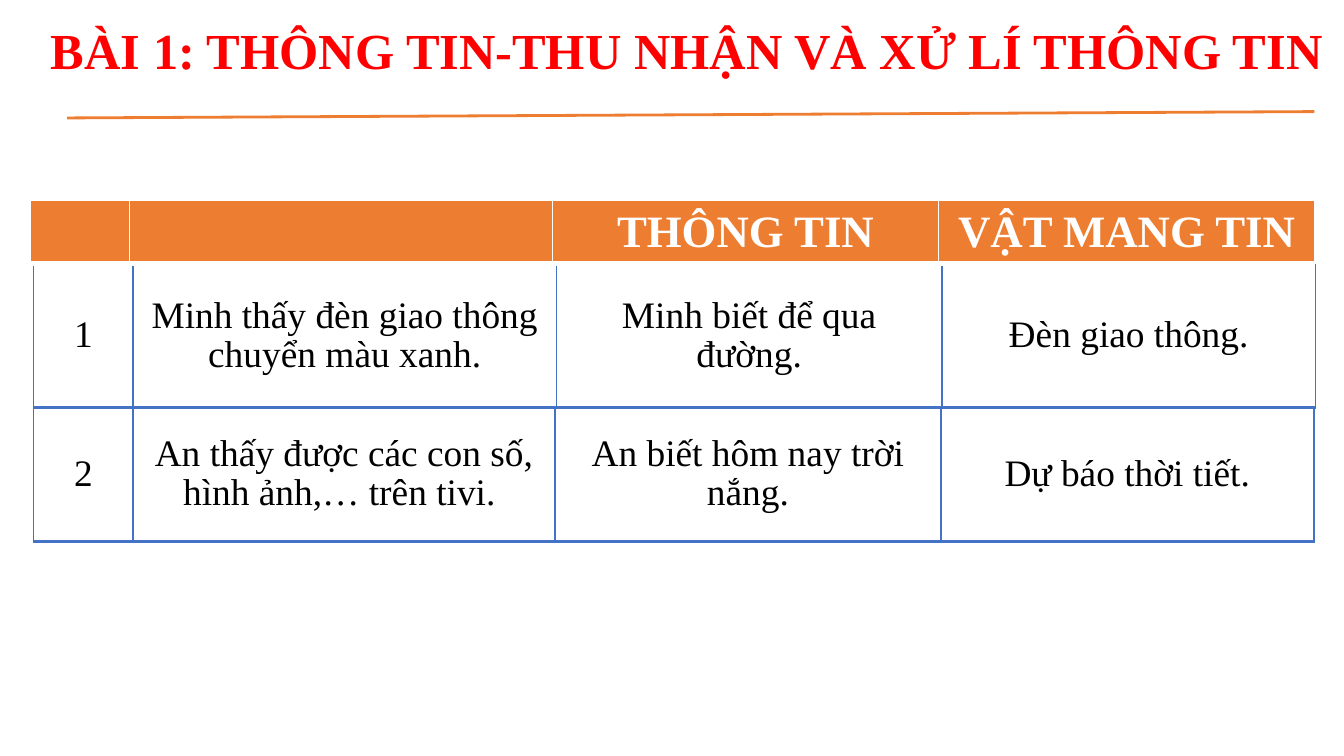
from lxml import etree
from pptx import Presentation
from pptx import util as u
from pptx.dml.color import RGBColor
from pptx.enum import shapes, text
from pptx.oxml import ns

ORANGE = RGBColor(0xED, 0x7D, 0x31)
BLUE = RGBColor(0x44, 0x72, 0xC4)
RED = RGBColor(0xFF, 0, 0)
WHITE = RGBColor(0xFF, 0xFF, 0xFF)
BLACK = RGBColor(0, 0, 0)
FONT = "Times New Roman"

TITLE = "BÀI 1: THÔNG TIN-THU NHẬN VÀ XỬ LÍ THÔNG TIN"
TITLE_FORMAT = {"name": FONT, "size": u.Pt(27), "bold": True}

HEADER_STYLE = {
    "fill": ORANGE, "border": WHITE, "bottom": 3, "color": WHITE, "spacing": 1,
    "font": {"name": FONT, "size": u.Pt(24), "bold": True},
}
BODY_STYLE = {
    "fill": None, "border": BLUE, "bottom": 2, "color": BLACK, "spacing": 0.95,
    "font": {"name": FONT, "size": u.Pt(20), "bold": False},
}

# Back to front: (left, top, height, column widths, style, cell texts)
BANDS = [
    (18, 141.8, 76.4, (53.3, 226.8, 206.6, 200), BODY_STYLE,
     ("1", "Minh thấy đèn giao thông chuyển màu xanh.",
      "Minh biết để qua đường.", "Đèn giao thông.")),
    (16, 107.5, 29.5, (53.3, 226.8, 206.6, 201.6), HEADER_STYLE,
     ("", "", "THÔNG TIN", "VẬT MANG TIN")),
    (18, 218.2, 72, (53.3, 226.1, 206.6, 200), BODY_STYLE,
     ("2", "An thấy được các con số, hình ảnh,… trên tivi. ",
      "An biết hôm nay trời nắng.", "Dự báo thời tiết.")),
]


def write(paragraph, words, font_format, color):
    paragraph.alignment = text.PP_ALIGN.CENTER
    if not words:
        return
    run = paragraph.add_run()
    run.text = words
    for name, value in font_format.items():
        setattr(run.font, name, value)
    run.font.color.rgb = color


def set_borders(cell, color, bottom_width):
    properties = cell._tc.get_or_add_tcPr()
    widths = {"lnL": 1, "lnR": 1, "lnT": 1, "lnB": bottom_width}
    for position, (side, width) in enumerate(widths.items()):
        line = etree.Element(ns.qn(f"a:{side}"), w=str(u.Pt(width)))
        fill = etree.SubElement(line, ns.qn("a:solidFill"))
        etree.SubElement(fill, ns.qn("a:srgbClr"), val=str(color))
        properties.insert(position, line)


def add_band(slide, left, top, height, widths, style, words):
    """Add a one-row table."""
    table = slide.shapes.add_table(
        1, len(widths), u.Pt(left), u.Pt(top), u.Pt(sum(widths)), u.Pt(height)
    ).table
    table.first_row = table.horz_banding = False
    for column, width in zip(table.columns, widths):
        column.width = u.Pt(width)
    for cell, cell_text in zip(table.rows[0].cells, words):
        cell.vertical_anchor = text.MSO_ANCHOR.MIDDLE
        if style["fill"] is None:
            cell.fill.background()
        else:
            cell.fill.solid()
            cell.fill.fore_color.rgb = style["fill"]
        set_borders(cell, style["border"], style["bottom"])
        paragraph = cell.text_frame.paragraphs[0]
        paragraph.line_spacing = style["spacing"]
        write(paragraph, cell_text, style["font"], style["color"])


def add_rule(slide):
    rule = slide.shapes.add_connector(
        shapes.MSO_CONNECTOR.STRAIGHT, u.Pt(36), u.Pt(63.2), u.Pt(704.2), u.Pt(59.8))
    rule.line.color.rgb = ORANGE
    rule.line.width = u.Pt(1.5)
    etree.SubElement(rule._element.spPr, ns.qn("a:effectLst"))


def add_title(slide):
    box = slide.shapes.add_textbox(u.Pt(23), u.Pt(10), u.Pt(690), u.Pt(65.5))
    frame = box.text_frame
    frame.word_wrap = True
    for side in ("left", "top", "right", "bottom"):
        setattr(frame, f"margin_{side}", 0)
    write(frame.paragraphs[0], TITLE, TITLE_FORMAT, RED)


def main():
    presentation = Presentation()
    presentation.slide_width, presentation.slide_height = u.Pt(720), u.Pt(405)
    slide = presentation.slides.add_slide(presentation.slide_layouts[6])
    add_rule(slide)
    for band in BANDS:
        add_band(slide, *band)
    add_title(slide)
    presentation.save("out.pptx")


if __name__ == "__main__":
    main()
